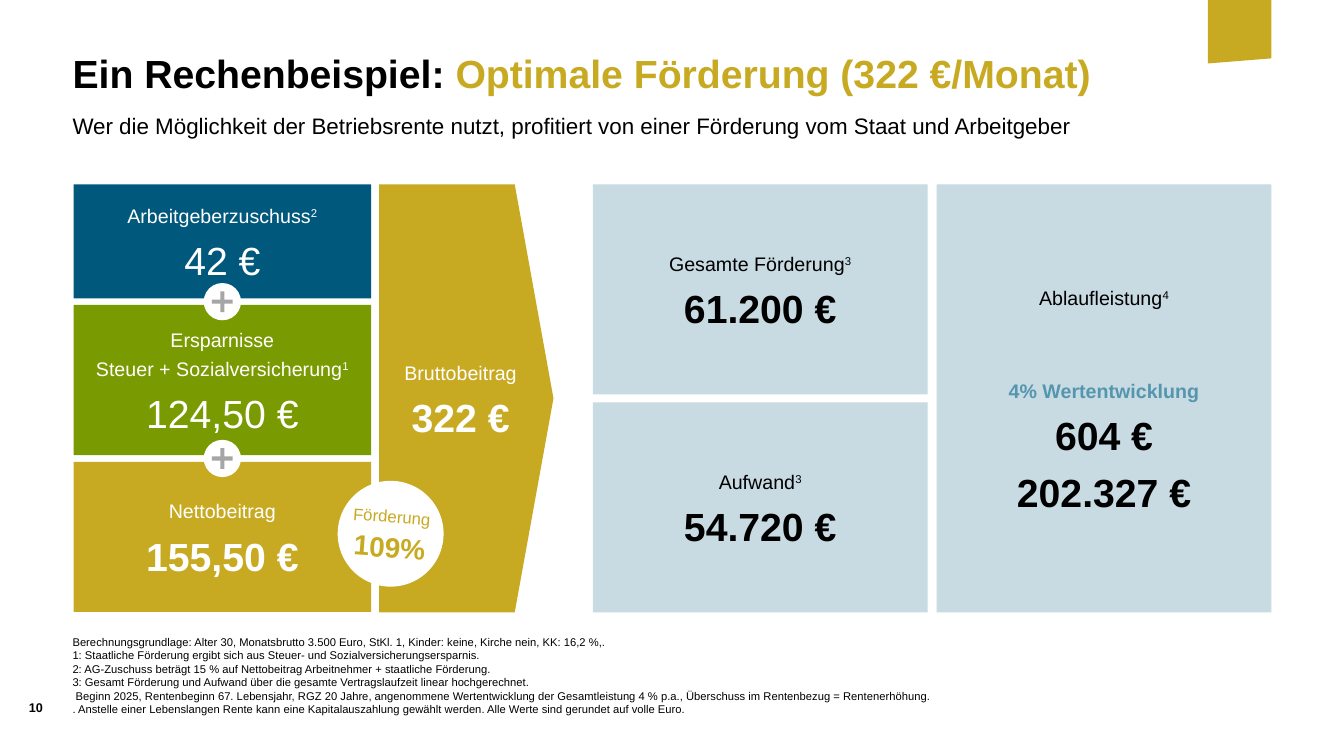
from dataclasses import dataclass

from pptx import Presentation
from pptx import util as u
from pptx.dml.color import RGBColor
from pptx.enum import shapes, text


@dataclass(frozen=True)
class Theme:
    font: str = "Arial"
    black: str = "000000"
    white: str = "FFFFFF"
    gold: str = "C8AA22"
    green: str = "7A9A01"
    blue: str = "00587C"
    pale: str = "C8DAE2"
    steel: str = "5496AD"
    grey: str = "A6A6A6"
    figure: int = 28
    badge: int = 20
    lead: int = 16
    label: int = 14
    small: int = 12
    page: int = 9
    note: int = 8


@dataclass(frozen=True)
class Run:
    text: str
    size: int
    color: str
    bold: bool = False
    raised: bool = False


@dataclass(frozen=True)
class Para:
    runs: tuple[Run, ...]
    before: float = 0


@dataclass(frozen=True)
class Box:
    x: float
    y: float
    w: float
    h: float


@dataclass(frozen=True)
class Card:
    box: Box
    fill: str
    paras: tuple[Para, ...]
    kind: shapes.MSO_SHAPE = shapes.MSO_SHAPE.RECTANGLE
    adjust: float | None = None
    right_inset: float = 0.08


T = Theme()
prs = Presentation()
prs.slide_width, prs.slide_height = u.Inches(13.33), u.Inches(7.5)
s = prs.slides.add_slide(prs.slide_layouts[5])


def across(share: float) -> int:
    return round(prs.slide_width * share / 100)


def down(share: float) -> int:
    return round(prs.slide_height * share / 100)


def place(box: Box) -> tuple[int, int, int, int]:
    return across(box.x), down(box.y), across(box.w), down(box.h)


def write(sp, paras: tuple[Para, ...], align=text.PP_ALIGN.CENTER, anchor=text.MSO_ANCHOR.MIDDLE,
          insets=(0, 0, 0, 0), spacing: float = 1.0, wrap: bool = True) -> None:
    tf = sp.text_frame
    tf.auto_size = text.MSO_AUTO_SIZE.NONE
    tf.word_wrap, tf.vertical_anchor = wrap, anchor
    tf.margin_left, tf.margin_top, tf.margin_right, tf.margin_bottom = map(u.Inches, insets)
    for i, para in enumerate(paras):
        p = tf.paragraphs[0] if i == 0 else tf.add_paragraph()
        p.alignment, p.line_spacing = align, spacing
        p.space_before = u.Pt(para.before)
        for run in para.runs:
            r = p.add_run()
            r.text = run.text
            r.font.name, r.font.size, r.font.bold = T.font, u.Pt(run.size), run.bold
            r.font.color.rgb = RGBColor.from_string(run.color)
            if run.raised:
                r._r.get_or_add_rPr().set("baseline", "30000")


def paint(sp, fill: str) -> None:
    sp.shadow.inherit = False
    sp.fill.solid()
    sp.fill.fore_color.rgb = RGBColor.from_string(fill)
    sp.line.fill.background()


def shape(kind: shapes.MSO_SHAPE, box: Box, fill: str, adjust: float | None = None):
    sp = s.shapes.add_shape(kind, *place(box))
    paint(sp, fill)
    if adjust is not None:
        sp.adjustments[0] = adjust
    return sp


def centred(x: float, y: float, w: float, h: float) -> Box:
    return Box(x - w / 2, y - h / 2, w, h)


def label(words: str, color: str, mark: str = "") -> Para:
    runs = (Run(words, T.label, color),)
    return Para(runs + ((Run(mark, T.label, color, raised=True),) if mark else ()))


def figure(words: str, color: str, bold: bool = True) -> Para:
    return Para((Run(words, T.figure, color, bold),))


def draw_card(card: Card) -> None:
    sp = shape(card.kind, card.box, card.fill, card.adjust)
    write(sp, card.paras, insets=(0.08, 0.04, card.right_inset, 0.04), spacing=1.2)


def text_box(box: Box, paras: tuple[Para, ...], **style) -> None:
    write(s.shapes.add_textbox(*place(box)), paras, **style)


MARGIN, TOP, HEIGHT = 5.4, 24.4, 56.6
STACK_X, STACK_W, STACK_GAP = 5.48, 22.13, 0.87
RESULT_X, RESULT_W, RESULT_GAP = 44.11, 24.91, 0.67
HALF_GAP = 1.07
HALF_H = (HEIGHT - HALF_GAP) / 2
LEFT = dict(align=text.PP_ALIGN.LEFT, anchor=text.MSO_ANCHOR.TOP)

flag = s.shapes.build_freeform(across(94.6), 0)
flag.add_line_segments([(across(89.87), 0), (across(89.87), down(8.4)), (across(94.6), down(7.73))])
paint(flag.convert_to_shape(), T.gold)

title = s.shapes.title
title.left, title.top, title.width, title.height = place(Box(MARGIN, 6.53, 83.2, 6.27))
write(title, (Para((Run("Ein Rechenbeispiel: ", T.figure, T.black, True),
                    Run("Optimale Förderung (322 €/Monat)", T.figure, T.gold, True))),), **LEFT)
text_box(Box(MARGIN, 14.13, 83.2, 4.53), (Para((Run(
    "Wer die Möglichkeit der Betriebsrente nutzt, profitiert von einer Förderung vom Staat und Arbeitgeber",
    T.lead, T.black),)),), spacing=1.2, **LEFT)
text_box(Box(1.05, 92.53, 3.23, 2), (Para((Run("10", T.page, T.black, True),)),),
         anchor=text.MSO_ANCHOR.TOP, wrap=False)

notes = (
    "Berechnungsgrundlage: Alter 30, Monatsbrutto 3.500 Euro, StKl. 1, Kinder: keine, Kirche nein, KK: 16,2 %,.",
    "1: Staatliche Förderung ergibt sich aus Steuer- und Sozialversicherungsersparnis.",
    "2: AG-Zuschuss beträgt 15 % auf Nettobeitrag Arbeitnehmer + staatliche Förderung.",
    "3: Gesamt Förderung und Aufwand über die gesamte Vertragslaufzeit linear hochgerechnet.",
    " Beginn 2025, Rentenbeginn 67. Lebensjahr, RGZ 20 Jahre, angenommene Wertentwicklung der "
    "Gesamtleistung 4 % p.a., Überschuss im Rentenbezug = Rentenerhöhung.",
    ". Anstelle einer Lebenslangen Rente kann eine Kapitalauszahlung gewählt werden. "
    "Alle Werte sind gerundet auf volle Euro.",
)
text_box(Box(MARGIN, 83.87, 89.2, 10.8), tuple(Para((Run(n, T.note, T.black),)) for n in notes),
         align=text.PP_ALIGN.LEFT, anchor=text.MSO_ANCHOR.BOTTOM)

stack = (
    (15.07, T.blue, (label("Arbeitgeberzuschuss", T.white, "2"), figure("42 €", T.white, False))),
    (19.87, T.green, (label("Ersparnisse", T.white), label("Steuer + Sozialversicherung", T.white, "1"),
                      figure("124,50 €", T.white, False))),
    (19.87, T.gold, (label("Nettobeitrag", T.white), figure("155,50 €", T.white))),
)
y, joints = TOP, []
for height, fill, paras in stack:
    draw_card(Card(Box(STACK_X, y, STACK_W, height), fill, paras))
    y += height + STACK_GAP
    joints.append(y - STACK_GAP / 2)

draw_card(Card(Box(28.2, TOP, 12.98, HEIGHT), T.gold,
               (label("Bruttobeitrag", T.white), figure("322 €", T.white)),
               shapes.MSO_SHAPE.PENTAGON, 0.222, 0))

badge = shape(shapes.MSO_SHAPE.OVAL, Box(25.13, 63.6, 7.88, 14), T.white)
badge.rotation = 4.3
write(badge, (Para((Run("Förderung", T.small, T.gold),)), Para((Run("109%", T.badge, T.gold, True),))),
      insets=(0.08, 0, 0.08, 0), spacing=1.1, wrap=False)

for joint in joints[:-1]:
    centre = STACK_X + STACK_W / 2
    shape(shapes.MSO_SHAPE.OVAL, centred(centre, joint, 2.78, 4.93), T.white)
    shape(shapes.MSO_SHAPE.MATH_PLUS, centred(centre, joint, 2.1, 3.73), T.grey, 0.146)

halves = (("Gesamte Förderung", "61.200 €"), ("Aufwand", "54.720 €"))
for row, (words, amount) in enumerate(halves):
    draw_card(Card(Box(RESULT_X, TOP + row * (HALF_H + HALF_GAP), RESULT_W, HALF_H), T.pale,
                   (label(words, T.black, "3"), figure(amount, T.black))))
draw_card(Card(Box(RESULT_X + RESULT_W + RESULT_GAP, TOP, RESULT_W, HEIGHT), T.pale, (
    label("Ablaufleistung", T.black, "4"),
    Para((Run("4% Wertentwicklung", T.label, T.steel, True),), 46),
    figure("604 €", T.black), figure("202.327 €", T.black))))

prs.save("out.pptx")
